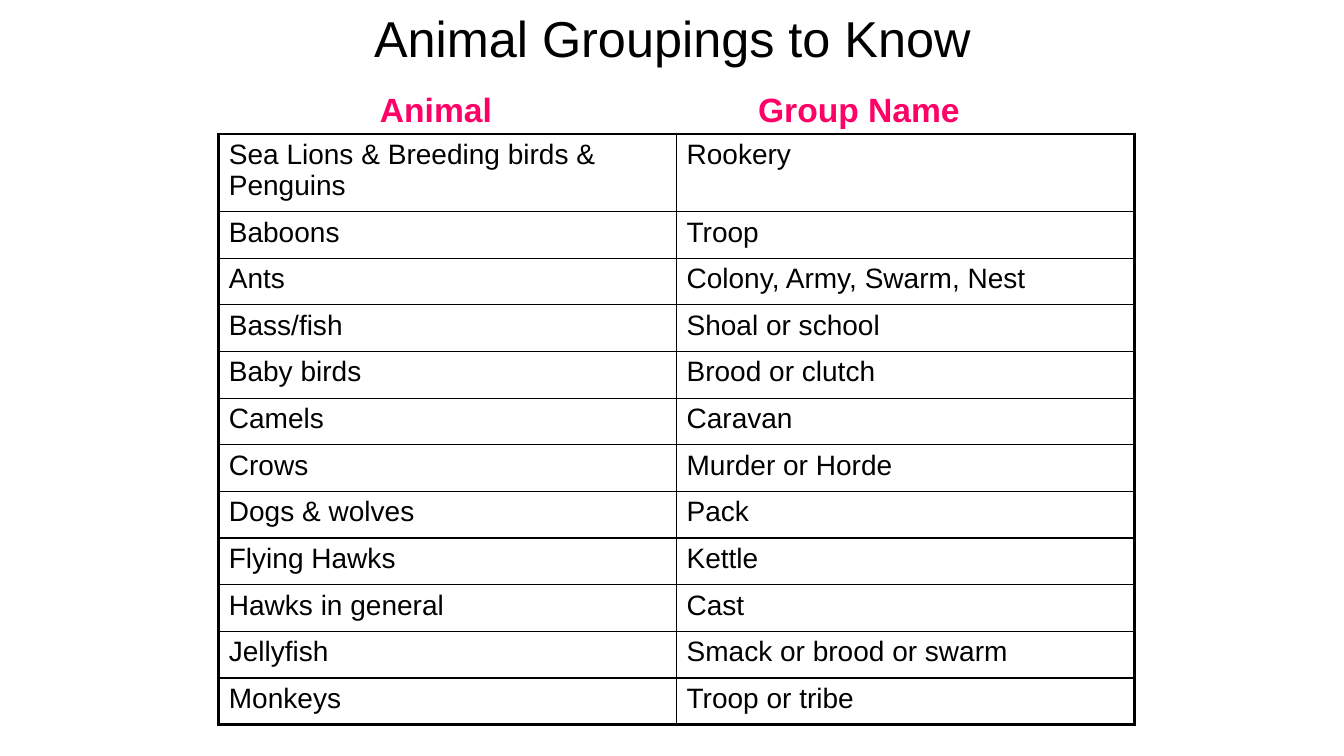
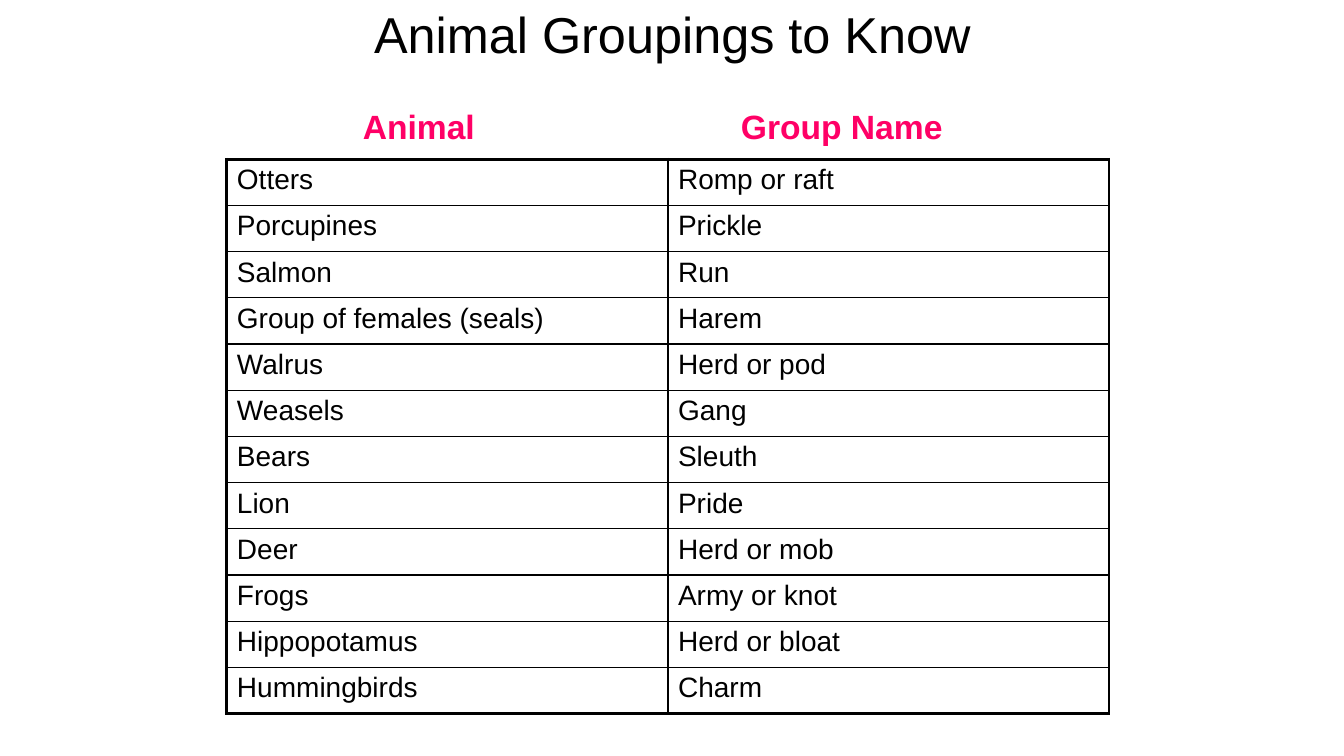
from lxml import etree
from pptx import Presentation
from pptx.dml.color import RGBColor
from pptx.enum.text import MSO_ANCHOR, MSO_AUTO_SIZE, PP_ALIGN
from pptx.oxml.ns import qn
from pptx.util import Inches, Pt

CENTER, LEFT = PP_ALIGN.CENTER, PP_ALIGN.LEFT
MIDDLE, TOP = MSO_ANCHOR.MIDDLE, MSO_ANCHOR.TOP
NO_AUTOSIZE, GROW = MSO_AUTO_SIZE.NONE, MSO_AUTO_SIZE.SHAPE_TO_FIT_TEXT

# Shared style
COLORS = {"ink": "000000", "accent": "FF0066", "paper": "FFFFFF"}
FONT = "Arial"
THICK, THIN = Pt(2.25), Pt(1)
TITLE = "Animal Groupings to Know"
HEADINGS = ("Animal", "Group Name")
HEADING_STEP = 3.75

# Each slide: title height, headings' corner, table frame, first row height, rows
SLIDES = [
    (0.75, (3.67, 0.83), (2.17, 1.33, 9.08, 5.86), 0.77, [
        ("Sea Lions & Breeding birds & Penguins", "Rookery"),
        ("Baboons", "Troop"),
        ("Ants", "Colony, Army, Swarm, Nest"),
        ("Bass/fish", "Shoal or school"),
        ("Baby birds", "Brood or clutch"),
        ("Camels", "Caravan"),
        ("Crows", "Murder or Horde"),
        ("Dogs & wolves", "Pack"),
        ("Flying Hawks", "Kettle"),
        ("Hawks in general", "Cast"),
        ("Jellyfish", "Smack or brood or swarm"),
        ("Monkeys", "Troop or tribe"),
    ]),
    (0.67, (3.5, 1), (2.25, 1.58, 8.75, 5.5), 5.5 / 12, [
        ("Otters", "Romp or raft"),
        ("Porcupines", "Prickle"),
        ("Salmon", "Run"),
        ("Group of females (seals)", "Harem"),
        ("Walrus", "Herd or pod"),
        ("Weasels", "Gang"),
        ("Bears", "Sleuth"),
        ("Lion", "Pride"),
        ("Deer", "Herd or mob"),
        ("Frogs", "Army or knot"),
        ("Hippopotamus", "Herd or bloat"),
        ("Hummingbirds", "Charm"),
    ]),
]


def write(tf, text, size, color="ink", bold=False, align=LEFT):
    p = tf.paragraphs[0]
    p.text = text
    p.alignment = align
    p.font.name, p.font.size, p.font.bold = FONT, Pt(size), bold
    p.font.color.rgb = RGBColor.from_string(COLORS[color])


def add_text(s, box, text, size, anchor=TOP, autosize=GROW, **style):
    tf = s.shapes.add_textbox(*map(Inches, box)).text_frame
    tf.word_wrap = True
    tf.auto_size = autosize
    tf.vertical_anchor = anchor
    write(tf, text, size, **style)


prs = Presentation()
prs.slide_width, prs.slide_height = Inches(13.33), Inches(7.5)

for title_height, (head_x, head_y), frame, first_height, rows in SLIDES:
    s = prs.slides.add_slide(prs.slide_layouts[6])
    s.background.fill.solid()
    s.background.fill.fore_color.rgb = RGBColor.from_string(COLORS["paper"])

    # Title
    add_text(s, (2.17, 0, 9, title_height), TITLE, 36,
             anchor=MIDDLE, autosize=NO_AUTOSIZE, align=CENTER)

    # Table: thick outer frame, thin inner rules
    n_rows, n_cols = len(rows), len(HEADINGS)
    table = s.shapes.add_table(n_rows, n_cols, *map(Inches, frame)).table
    table.first_row = table.horz_banding = False
    row_height = (frame[3] - first_height) / (n_rows - 1)
    for r, texts in enumerate(rows):
        table.rows[r].height = Inches(row_height if r else first_height)
        for c, text in enumerate(texts):
            cell = table.cell(r, c)
            write(cell.text_frame, text, 20)
            tcPr = cell._tc.get_or_add_tcPr()
            outer = {"lnL": c == 0, "lnR": c == n_cols - 1,
                     "lnT": r == 0, "lnB": r == n_rows - 1}
            for side, is_outer in outer.items():
                ln = etree.SubElement(tcPr, qn("a:" + side),
                                      w=str(THICK if is_outer else THIN))
                fill = etree.SubElement(ln, qn("a:solidFill"))
                etree.SubElement(fill, qn("a:srgbClr"), val=COLORS["ink"])
            cell.fill.background()

    # Column headings
    for i, heading in enumerate(HEADINGS):
        add_text(s, (head_x + i * HEADING_STEP, head_y, 2.42, 0.5), heading, 24,
                 color="accent", bold=True)

prs.save("out.pptx")
